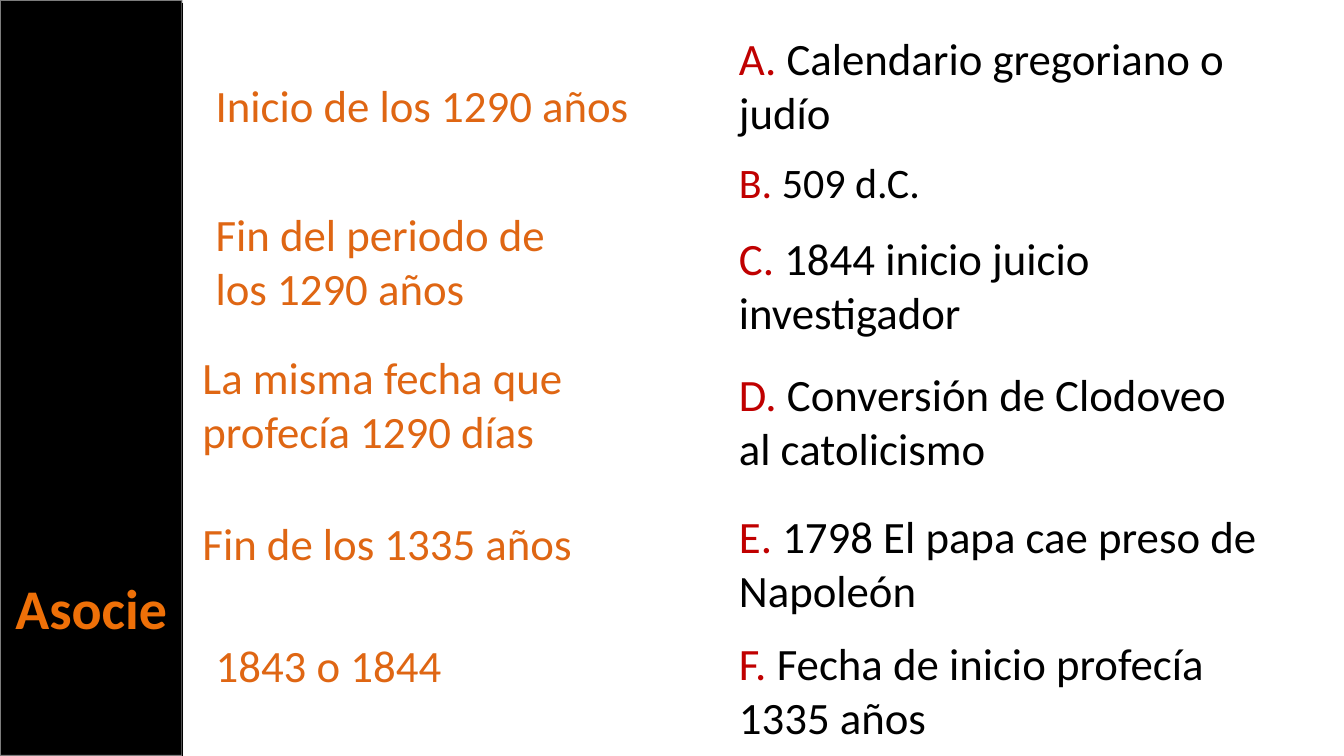
import pptx
import pptx.util
import pptx.dml.color
import pptx.enum.shapes
import pptx.enum.text
import pptx.oxml.ns
import lxml.etree

WIDTH, HEIGHT = 13.33, 7.5
SIDEBAR = 1.81
ANSWER_LEFT = 7.23
ORANGE, RED, BLACK = "DF6613", "C00000", "000000"

PROMPTS = [
    ("Inicio de los 1290 años", 2.04, 0.72, 4.59, 0.64),
    ("Fin del periodo de los 1290 años", 2.04, 2.0, 3.84, 1.18),
    ("La misma fecha que profecía 1290 días", 1.91, 3.42, 4.13, 1.18),
    ("Fin de los 1335 años", 1.91, 5.07, 4.39, 0.64),
    ("1843 o 1844", 2.04, 6.28, 2.75, 0.64),
]
ANSWERS = [
    ("Calendario gregoriano o judío", 0.26, 5.8, 1.18, 32),
    ("509 d.C.", 1.5, 4.18, 0.61, 30),
    ("1844 inicio juicio investigador", 2.24, 5.21, 1.18, 32),
    ("Conversión de Clodoveo al catolicismo", 3.59, 5.41, 1.18, 32),
    ("1798 El papa cae preso de Napoleón", 5.0, 5.59, 1.18, 32),
    ("Fecha de inicio profecía 1335 años", 6.26, 5.59, 1.18, 32),
]


def color(value):
    return pptx.dml.color.RGBColor.from_string(value)


def inches(*lengths):
    return [pptx.util.Inches(length) for length in lengths]


def format_run(r, size, hex_color, bold=False):
    r.font.name = "Calibri"
    r.font.size = pptx.util.Pt(size)
    r.font.bold = bold
    r.font.color.rgb = color(hex_color)


def add_text(slide, box, parts, size=32):
    sp = slide.shapes.add_textbox(*inches(*box))
    tf = sp.text_frame
    tf.word_wrap = True
    tf.auto_size = pptx.enum.text.MSO_AUTO_SIZE.SHAPE_TO_FIT_TEXT
    for text, hex_color in parts:
        r = tf.paragraphs[0].add_run()
        r.text = text
        format_run(r, size, hex_color)


def add_sidebar(slide):
    sp = slide.shapes.add_shape(
        pptx.enum.shapes.MSO_SHAPE.RECTANGLE, *inches(0, 0, SIDEBAR, HEIGHT))
    sp.shadow.inherit = False
    sp.fill.solid()
    sp.fill.fore_color.rgb = color(BLACK)
    sp.line.color.rgb = color("F9F9F9")
    sp.line.width = pptx.util.Pt(1.35)
    line_color = sp.line._get_or_add_ln().find(".//" + pptx.oxml.ns.qn("a:srgbClr"))
    lxml.etree.SubElement(line_color, pptx.oxml.ns.qn("a:alpha"), val="50000")


def add_edge(slide):
    edge = slide.shapes.add_connector(
        pptx.enum.shapes.MSO_CONNECTOR.STRAIGHT,
        *inches(SIDEBAR, 0.03, SIDEBAR, HEIGHT))
    edge.line.color.rgb = color(BLACK)
    edge.line.width = pptx.util.Pt(0.85)
    lxml.etree.SubElement(edge.element.spPr, pptx.oxml.ns.qn("a:effectLst"))


def place_title(slide, text):
    title = slide.shapes.title
    title.left, title.top, title.width, title.height = inches(0, 5.64, SIDEBAR, 0.77)
    tf = title.text_frame
    tf.text = text
    tf.word_wrap = True
    tf.auto_size = pptx.enum.text.MSO_AUTO_SIZE.SHAPE_TO_FIT_TEXT
    tf.vertical_anchor = pptx.enum.text.MSO_ANCHOR.TOP
    p = tf.paragraphs[0]
    p.alignment = pptx.enum.text.PP_ALIGN.CENTER
    format_run(p.runs[0], 40, "EE7008", bold=True)
    title.element.getparent().append(title.element)


def main():
    prs = pptx.Presentation()
    prs.slide_width, prs.slide_height = inches(WIDTH, HEIGHT)
    slide = prs.slides.add_slide(prs.slide_layouts[5])
    add_sidebar(slide)
    for text, *box in PROMPTS:
        add_text(slide, box, [(text, ORANGE)])
    for letter, (text, top, width, height, size) in zip("ABCDEF", ANSWERS):
        parts = [(f"{letter}. ", RED), (text, BLACK)]
        add_text(slide, (ANSWER_LEFT, top, width, height), parts, size)
    place_title(slide, "Asocie")
    add_edge(slide)
    prs.save("out.pptx")


if __name__ == "__main__":
    main()
